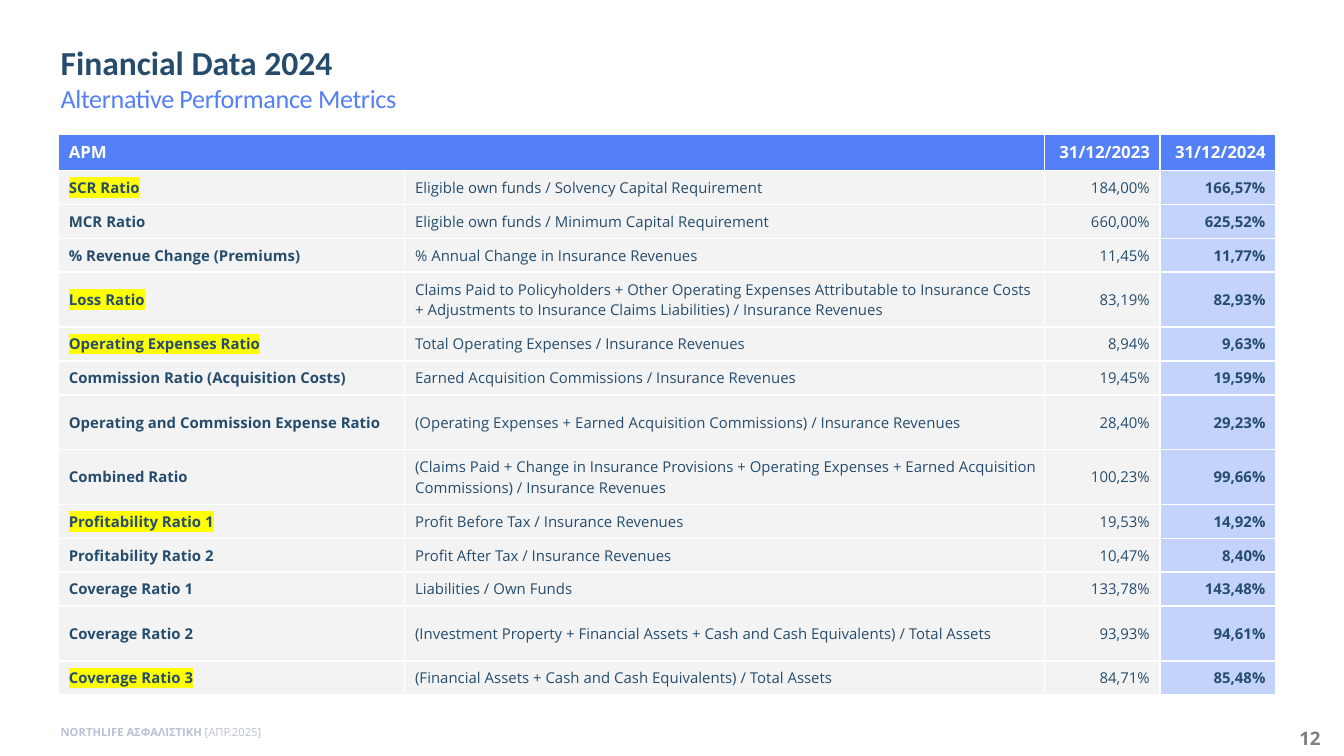
from lxml import etree
from pptx import Presentation
from pptx.dml.color import RGBColor
from pptx.enum.text import MSO_ANCHOR, PP_ALIGN
from pptx.oxml.ns import qn
from pptx.util import Pt

MIDDLE, LEFT, RIGHT = MSO_ANCHOR.MIDDLE, PP_ALIGN.LEFT, PP_ALIGN.RIGHT
NAVY = RGBColor(0x25, 0x4C, 0x6D)
BLUE = RGBColor(0x54, 0x80, 0xF7)
PALE = RGBColor(0xC4, 0xD3, 0xFC)
LIGHT = RGBColor(0xF3, 0xF3, 0xF3)
WHITE = RGBColor(0xFF, 0xFF, 0xFF)
YELLOW = RGBColor(0xFF, 0xFF, 0x00)
MIST = RGBColor(0xB8, 0xC2, 0xD2)
GRAY = RGBColor(0x80, 0x80, 0x80)

HEAD = ("APM", "", "31/12/2023", "31/12/2024")
RATIOS = [
    ("SCR Ratio", "Eligible own funds / Solvency Capital Requirement", "184,00%", "166,57%"),
    ("MCR Ratio", "Eligible own funds / Minimum Capital Requirement", "660,00%", "625,52%"),
    ("% Revenue Change (Premiums)", "% Annual Change in Insurance Revenues", "11,45%", "11,77%"),
    ("Loss Ratio",
     "Claims Paid to Policyholders + Other Operating Expenses Attributable to Insurance Costs "
     "+ Adjustments to Insurance Claims Liabilities) / Insurance Revenues", "83,19%", "82,93%"),
    ("Operating Expenses Ratio", "Total Operating Expenses / Insurance Revenues", "8,94%", "9,63%"),
    ("Commission Ratio (Acquisition Costs)",
     "Earned Acquisition Commissions / Insurance Revenues", "19,45%", "19,59%"),
    ("Operating and Commission Expense Ratio",
     "(Operating Expenses + Earned Acquisition Commissions) / Insurance Revenues",
     "28,40%", "29,23%"),
    ("Combined Ratio",
     "(Claims Paid + Change in Insurance Provisions + Operating Expenses + Earned Acquisition "
     "Commissions) / Insurance Revenues", "100,23%", "99,66%"),
    ("Profitability Ratio 1", "Profit Before Tax / Insurance Revenues", "19,53%", "14,92%"),
    ("Profitability Ratio 2", "Profit After Tax / Insurance Revenues", "10,47%", "8,40%"),
    ("Coverage Ratio 1", "Liabilities / Own Funds", "133,78%", "143,48%"),
    ("Coverage Ratio 2",
     "(Investment Property + Financial Assets + Cash and Cash Equivalents) / Total Assets",
     "93,93%", "94,61%"),
    ("Coverage Ratio 3",
     "(Financial Assets + Cash and Cash Equivalents) / Total Assets", "84,71%", "85,48%"),
]
MARKED = {"SCR Ratio", "Loss Ratio", "Operating Expenses Ratio",
          "Profitability Ratio 1", "Coverage Ratio 3"}
TALL = {"Loss Ratio", "Operating and Commission Expense Ratio",
        "Combined Ratio", "Coverage Ratio 2"}

WIDTHS = (185.5, 342.8, 62, 62)
HEAD_H, ROW_H, TALL_H = 19.4, 18.15, 29.4
PAD, EDGE = 5.6, 2.8


def write(par, text, size=8, color=NAVY, bold=False, font="Open Sans",
          align=LEFT, mark=None, spacing=None):
    """Add one formatted run to a paragraph."""
    par.alignment = align
    run = par.add_run()
    run.text = text
    style = run.font
    style.size, style.bold, style.name = Pt(size), bold, font
    style.color.rgb = color
    props = style._element if hasattr(style, "_element") else run._r.get_or_add_rPr()
    if mark:
        light = etree.Element(qn("a:highlight"))
        etree.SubElement(light, qn("a:srgbClr"), val=str(mark))
        props.find(qn("a:latin")).addprevious(light)
    if spacing:
        props.set("spc", str(round(spacing * 100)))


def add_box(slide, left, top, width, height, wrap=True):
    """Add a text box and return its frame."""
    frame = slide.shapes.add_textbox(Pt(left), Pt(top), Pt(width), Pt(height)).text_frame
    frame.word_wrap = wrap
    return frame


def dress(cell, fill, left, right, edge):
    """Set a cell's white borders, fill, anchor and margins."""
    props = cell._tc.get_or_add_tcPr()
    for side in ("lnL", "lnR", "lnT", "lnB"):
        line = etree.SubElement(props, qn("a:" + side), w=str(Pt(1)))
        paint = etree.SubElement(line, qn("a:solidFill"))
        etree.SubElement(paint, qn("a:srgbClr"), val=str(WHITE))
    cell.fill.solid()
    cell.fill.fore_color.rgb = fill
    cell.vertical_anchor = MIDDLE
    cell.margin_left, cell.margin_right = Pt(left), Pt(right)
    cell.margin_top = cell.margin_bottom = Pt(edge)


def add_grid(slide):
    heights = [HEAD_H] + [TALL_H if row[0] in TALL else ROW_H for row in RATIOS]
    grid = slide.shapes.add_table(len(heights), len(WIDTHS), Pt(31.3), Pt(72),
                                  Pt(sum(WIDTHS)), Pt(sum(heights))).table
    for col, width in zip(grid.columns, WIDTHS):
        col.width = Pt(width)
    for row, height in zip(grid.rows, heights):
        row.height = Pt(height)
    grid.cell(0, 0).merge(grid.cell(0, 1))

    for r, row in enumerate([HEAD] + RATIOS):
        for c, text in enumerate(row):
            cell, head, value = grid.cell(r, c), r == 0, c > 1
            fill = BLUE if head else PALE if c == 3 else LIGHT
            dress(cell, fill, 0 if value else PAD, PAD if value else 0,
                  EDGE if head or c == 0 else 0)
            if text:
                write(cell.text_frame.paragraphs[0], text,
                      size=9 if head else 8, color=WHITE if head else NAVY,
                      bold=head or c in (0, 3), align=RIGHT if value else LEFT,
                      mark=YELLOW if text in MARKED else None)


def main():
    deck = Presentation()
    deck.slide_width, deck.slide_height = Pt(720), Pt(405)
    slide = deck.slides.add_slide(deck.slide_layouts[6])

    title = add_box(slide, 25.4, 15.3, 481.7, 44)
    title.margin_top = title.margin_bottom = Pt(7.2)
    par = title.paragraphs[0]
    write(par, "Financial Data 2024", size=18, bold=True, font="Calibri")
    par.add_line_break()
    write(par, "Alternative Performance Metrics", size=14, color=BLUE,
          font="Calibri", spacing=-0.2)

    add_grid(slide)

    par = add_box(slide, 25.4, 385, 121.7, 14.4, wrap=False).paragraphs[0]
    write(par, "NORTHLIFE ΑΣΦΑΛΙΣΤΙΚΗ ", size=6, color=MIST, bold=True)
    write(par, "[ΑΠΡ.2025]", size=6, color=MIST)

    par = add_box(slide, 689, 386, 26, 19.4).paragraphs[0]
    write(par, "12", size=10, color=GRAY, bold=True)

    deck.save("out.pptx")


if __name__ == "__main__":
    main()
